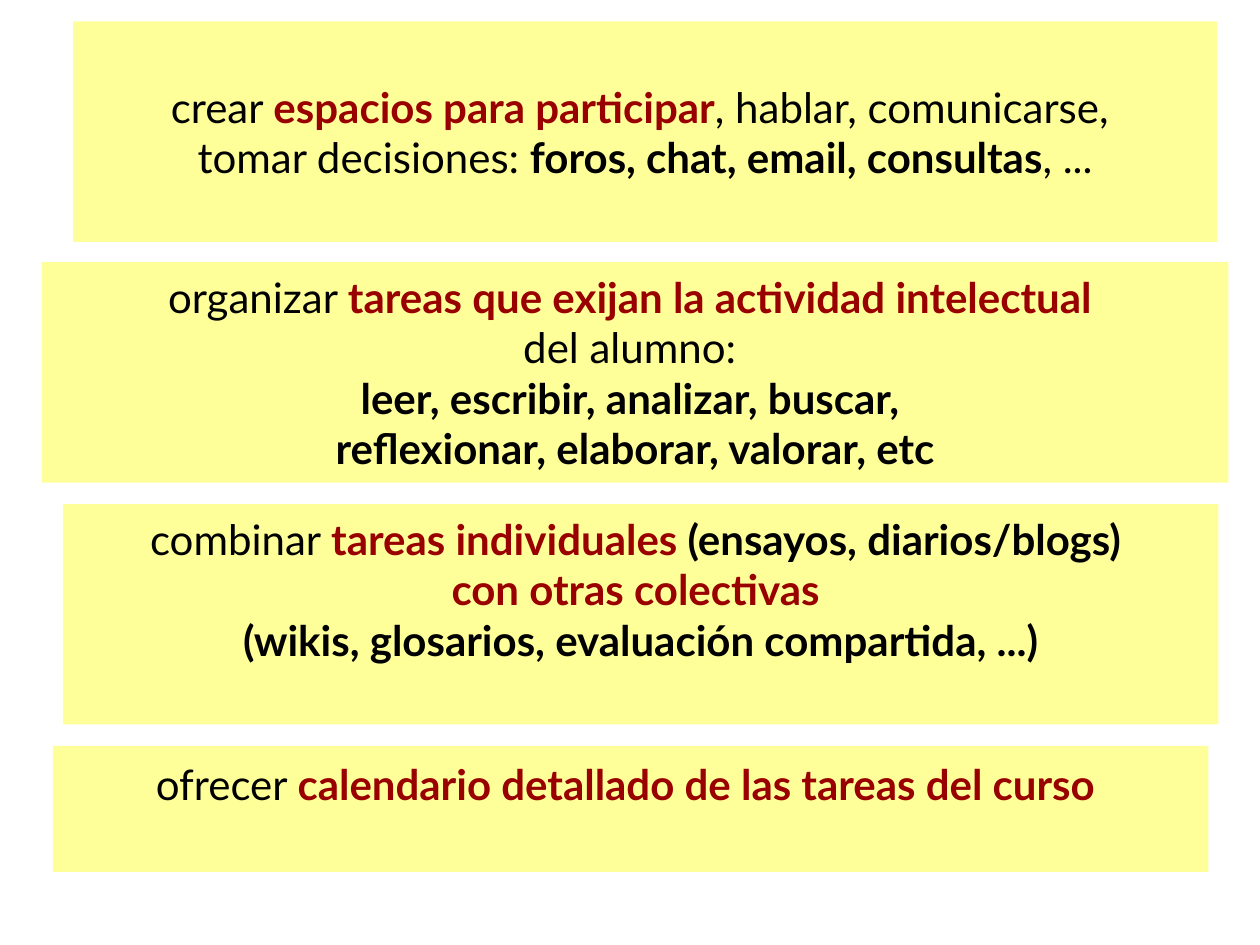
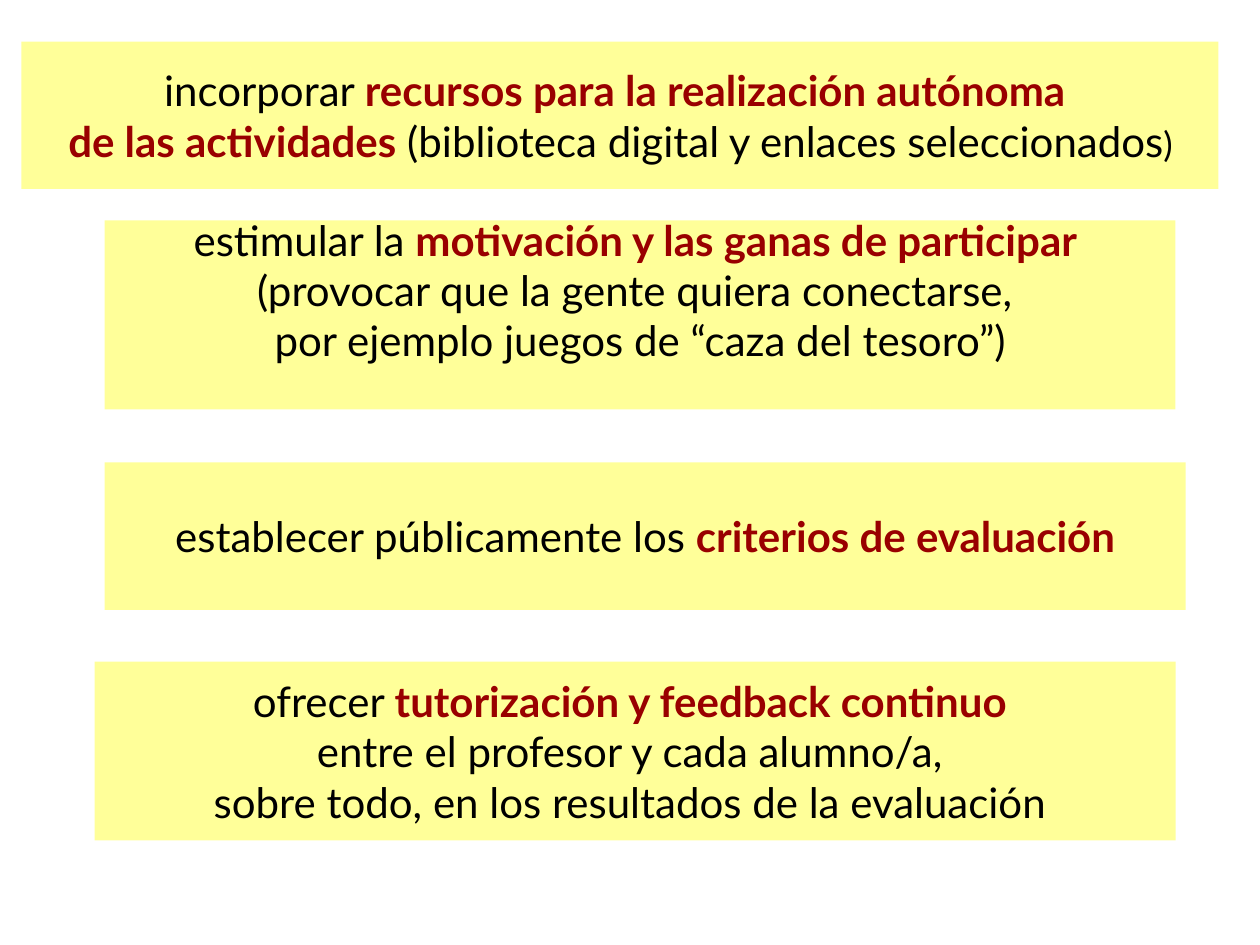
from dataclasses import dataclass

from pptx import Presentation
from pptx.dml.color import RGBColor
from pptx.enum.shapes import MSO_SHAPE
from pptx.enum.text import MSO_ANCHOR, PP_ALIGN
from pptx.util import Inches, Pt

RECT = MSO_SHAPE.RECTANGLE
MIDDLE = MSO_ANCHOR.MIDDLE
CENTER = PP_ALIGN.CENTER
BLANK = 6


@dataclass(frozen=True)
class Theme:
    font: str = "Lato"
    size: int = 24
    small: int = 20
    band: RGBColor = RGBColor(0xFF, 0xFF, 0x99)
    ink: RGBColor = RGBColor(0x00, 0x00, 0x00)
    accent: RGBColor = RGBColor(0x99, 0x00, 0x00)


def plain(text):
    return text, False, False, False


def bold(text):
    return text, True, False, False


def key(text):
    return text, True, True, False


def small(text):
    return text, False, False, True


class Deck:
    def __init__(self, theme):
        self.theme = theme
        self.show = Presentation()
        self.show.slide_width = Inches(10)
        self.show.slide_height = Inches(7.5)
        self.slide = None

    def page(self):
        layout = self.show.slide_layouts[BLANK]
        self.slide = self.show.slides.add_slide(layout)

    def band(self, place, lines, foot=0.05):
        box = self.slide.shapes.add_shape(RECT, *map(Inches, place))
        box.shadow.inherit = False
        box.fill.solid()
        box.fill.fore_color.rgb = self.theme.band
        box.line.fill.background()
        frame = box.text_frame
        frame.word_wrap = False
        frame.vertical_anchor = MIDDLE
        frame.margin_bottom = Inches(foot)
        for index, line in enumerate(lines):
            para = frame.paragraphs[0] if index == 0 else frame.add_paragraph()
            self.line(para, line)

    def line(self, para, parts):
        para.alignment = CENTER
        para.font.name = self.theme.font
        para.font.size = Pt(self.theme.size)
        for text, strong, marked, little in parts:
            run = para.add_run()
            run.text = text
            run.font.bold = strong
            run.font.color.rgb = self.theme.accent if marked else self.theme.ink
            if little:
                run.font.size = Pt(self.theme.small)


RAISED = 0.45

TASKS = [
    ((0.58, 0.17, 9.08, 1.75), [
        [plain("crear "), key("espacios para participar"),
         plain(", hablar, comunicarse, ")],
        [plain("tomar decisiones: "), bold("foros, chat, email, consultas"),
         plain(", ...")],
    ]),
    ((0.33, 2.08, 9.42, 1.75), [
        [plain("organizar "), key("tareas que exijan la actividad intelectual ")],
        [plain("del alumno: ")],
        [bold("leer, escribir, analizar, buscar, ")],
        [bold("reflexionar, elaborar, valorar, etc")],
    ]),
    ((0.5, 4, 9.17, 1.75), [
        [plain("combinar "), key("tareas individuales "),
         bold("(ensayos, diarios/blogs) ")],
        [key("con otras colectivas ")],
        [bold("(wikis, glosarios, evaluación compartida, ...)")],
    ], RAISED),
    ((0.42, 5.92, 9.17, 1), [
        [plain("ofrecer "), key("calendario detallado de las tareas del curso ")],
    ], RAISED),
]

SUPPORT = [
    ((0.17, 0.33, 9.5, 1.17), [
        [plain("incorporar "), key("recursos para la realización autónoma ")],
        [key(" de las actividades"),
         plain(" (biblioteca digital y enlaces seleccionados"), small(") ")],
    ]),
    ((0.83, 1.75, 8.5, 1.5), [
        [plain("estimular la "), key("motivación y las ganas de participar ")],
        [plain("(provocar que la gente quiera conectarse, ")],
        [plain("por ejemplo juegos de “caza del tesoro”)")],
    ], RAISED),
    ((0.83, 3.67, 8.58, 1.17), [
        [plain("establecer públicamente los "), key("criterios de evaluación")],
    ]),
    ((0.75, 5.25, 8.58, 1.42), [
        [plain("ofrecer "), key("tutorización y feedback continuo ")],
        [plain("entre el profesor y cada alumno/a, ")],
        [plain("sobre todo, en los resultados de la evaluación ")],
    ]),
]


def main():
    deck = Deck(Theme())
    for bands in (TASKS, SUPPORT):
        deck.page()
        for band in bands:
            deck.band(*band)
    deck.show.save("out.pptx")


if __name__ == "__main__":
    main()
